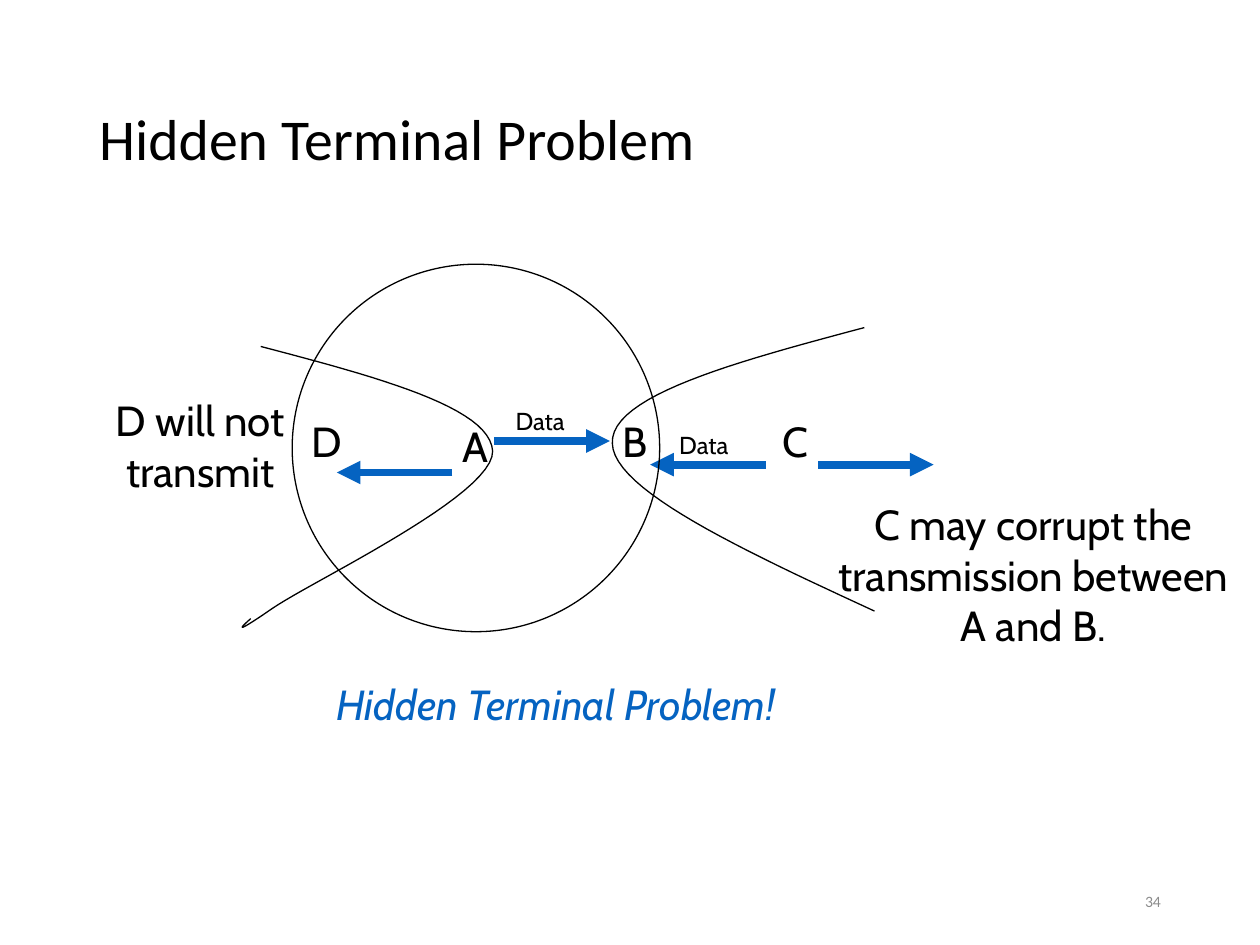
from dataclasses import dataclass

from lxml.etree import SubElement
from pptx import Presentation
from pptx.dml.color import RGBColor as Color
from pptx.enum.shapes import MSO_CONNECTOR as Link, MSO_SHAPE as Preset
from pptx.enum.text import MSO_ANCHOR as Anchor, MSO_AUTO_SIZE as Fit, PP_ALIGN as Align
from pptx.oxml.ns import qn
from pptx.util import Pt


@dataclass(frozen=True)
class Theme:
    """Colours, fonts and type sizes of the slide."""
    ink: Color = Color(0, 0, 0)
    signal: Color = Color(0x05, 0x63, 0xC1)
    muted: Color = Color(0x8C, 0x8C, 0x8C)
    heading_font: str = "Calibri"
    body_font: str = "Cabin"
    title: int = 33
    body: int = 24
    label: int = 14
    footer: int = 9
    outline: float = 0.75
    arrow: float = 4.5


def bezier(start, c1, c2, end, steps=24):
    """Return points along a cubic curve, leaving out its start."""
    points = []
    for step in range(1, steps + 1):
        t = step / steps
        u = 1 - t
        weights = (u ** 3, 3 * u * u * t, 3 * u * t * t, t ** 3)
        points.append(tuple(
            sum(w * p[axis] for w, p in zip(weights, (start, c1, c2, end)))
            for axis in (0, 1)))
    return points


class Page:
    """Draws styled elements on the current slide, in points."""

    def __init__(self, deck, theme):
        self.theme = theme
        self.slide = deck.slides.add_slide(deck.slide_layouts[5])
        self.shapes = self.slide.shapes

    def style(self, para, size, font, color, align=Align.LEFT, italic=False):
        para.alignment = align
        para.font.size = Pt(size)
        para.font.name = font
        para.font.color.rgb = color
        para.font.italic = italic

    def title(self, text, left, top, width, height):
        box = self.shapes.title
        box.left, box.top, box.width, box.height = map(Pt, (left, top, width, height))
        frame = box.text_frame
        frame.text = text
        frame.vertical_anchor = Anchor.MIDDLE
        frame.auto_size = Fit.NONE
        para = frame.paragraphs[0]
        para.line_spacing = 0.9
        self.style(para, self.theme.title, self.theme.heading_font, self.theme.ink)

    def text(self, lines, left, top, width, height, size=None, font=None, color=None,
             align=Align.LEFT, italic=False, wrap=False, anchor=Anchor.TOP):
        box = self.shapes.add_textbox(*map(Pt, (left, top, width, height)))
        frame = box.text_frame
        frame.text = lines
        frame.word_wrap = wrap
        frame.auto_size = Fit.SHAPE_TO_FIT_TEXT
        frame.vertical_anchor = anchor
        for para in frame.paragraphs:
            self.style(para, size or self.theme.body, font or self.theme.body_font,
                       color or self.theme.ink, align, italic)
        return box

    def outline(self, shape):
        shape.shadow.inherit = False
        shape.fill.background()
        shape.line.color.rgb = self.theme.ink
        shape.line.width = Pt(self.theme.outline)

    def circle(self, left, top, size):
        self.outline(self.shapes.add_shape(Preset.OVAL, *map(Pt, (left, top, size, size))))

    def curve(self, start, *segments):
        builder = self.shapes.build_freeform(Pt(start[0]), Pt(start[1]))
        for c1, c2, end in segments:
            points = bezier(start, c1, c2, end)
            builder.add_line_segments([(Pt(x), Pt(y)) for x, y in points], close=False)
            start = end
        self.outline(builder.convert_to_shape())

    def arrow(self, start_x, end_x, y, target=None):
        line = self.shapes.add_connector(
            Link.STRAIGHT, *map(Pt, (start_x, y, end_x, y)))
        if target is not None:
            line.end_connect(target, 1)
        line.line.color.rgb = self.theme.signal
        line.line.width = Pt(self.theme.arrow)
        properties = line.line._get_or_add_ln()
        SubElement(properties, qn("a:tailEnd"), type="triangle")
        SubElement(line._element.spPr, qn("a:effectLst"))


def main():
    theme = Theme()
    deck = Presentation()
    deck.slide_width, deck.slide_height = Pt(720), Pt(540)
    page = Page(deck, theme)
    page.title("Hidden Terminal Problem", 49.5, 28.75, 621, 104.4)

    page.curve((149, 198),
               ((214.6, 215.3), (280.1, 232.6), (281.5, 257.8)),
               ((282.2, 283), (178.6, 331.9), (155.5, 347.8)),
               ((132.5, 363.6), (137.5, 358.6), (143.3, 353.5)))
    page.curve((493.9, 187.2),
               ((421.2, 206.6), (348.5, 226.1), (349.9, 253.4)),
               ((350.6, 280.1), (424.8, 314.6), (499.7, 349.2)))

    page.text("A", 257, 237, 29, 36)
    receiver = page.text("B", 348.5, 234, 29, 36)
    page.text("C", 440, 234, 29, 36)
    page.text("D", 168.5, 234, 36, 36, align=Align.CENTER, wrap=True)

    page.arrow(282.5, 348.5, 252, receiver)
    page.arrow(258.5, 192.5, 270)
    page.arrow(437.5, 371.5, 265.5)
    page.arrow(467.5, 533.5, 265.5)
    for left, top in ((287.5, 228.5), (381, 242)):
        page.text("Data", left, top, 43, 24, size=theme.label)

    page.text("D will not transmit", 42.5, 222, 144, 65, align=Align.CENTER, wrap=True)
    page.text("C may corrupt the\ntransmission between\nA and B.",
              464.5, 281.5, 252, 94, align=Align.CENTER)
    page.text("Hidden Terminal Problem!", 185, 384, 290, 36,
              color=theme.signal, italic=True)
    page.circle(167, 151, 210)
    page.text("34", 508.5, 500.5, 162, 29, size=theme.footer, font=theme.heading_font,
              color=theme.muted, align=Align.RIGHT, wrap=True, anchor=Anchor.MIDDLE
              ).text_frame.auto_size = Fit.NONE
    deck.save("out.pptx")


if __name__ == "__main__":
    main()
